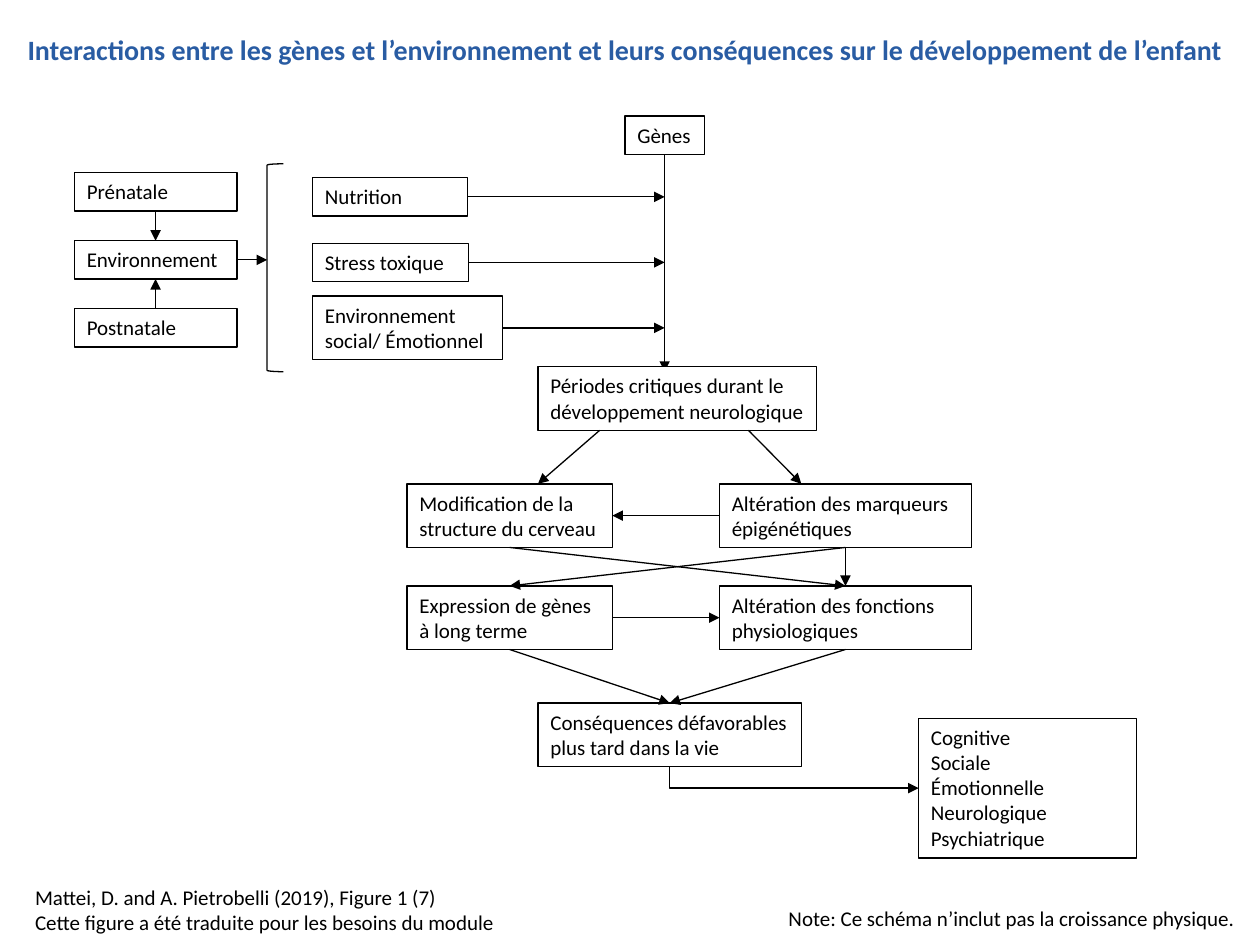
import dataclasses

import pptx
import pptx.dml.color
import pptx.enum.shapes
import pptx.enum.text
import pptx.oxml.ns
import pptx.oxml.xmlchemy
import pptx.util

TOP, LEFT, BOTTOM, RIGHT = range(4)
CELL = pptx.util.Inches(0.1)  # the slide is a grid of 100 columns by 75 rows
ONE_LINE, TWO_LINES = 3.05, 5.05  # box heights in rows


@dataclasses.dataclass(frozen=True)
class Theme:
    font: str = "Calibri"
    ink: str = "000000"
    paper: str = "FFFFFF"
    heading: str = "295CA3"
    heading_size: int = 16
    body_size: int = 12
    stroke: float = 0.75


@dataclasses.dataclass(frozen=True)
class Region:
    col: float
    row: float
    cols: float
    rows: float

    def point(self, col, row):
        return round((self.col + col) * CELL), round((self.row + row) * CELL)

    def area(self, col, row, cols, rows):
        return *self.point(col, row), round(cols * CELL), round(rows * CELL)

    def whole(self):
        return self.area(0, 0, self.cols, self.rows)


THEME = Theme()


def colour(code):
    return pptx.dml.color.RGBColor.from_string(code)


def write(shape, words, size=THEME.body_size, ink=THEME.ink, bold=False, wrap=True):
    frame = shape.text_frame
    frame.text = words
    frame.word_wrap = wrap
    frame.vertical_anchor = pptx.enum.text.MSO_ANCHOR.TOP
    for paragraph in frame.paragraphs:
        paragraph.alignment = pptx.enum.text.PP_ALIGN.LEFT
        for run in paragraph.runs:
            run.font.name = THEME.font
            run.font.size = pptx.util.Pt(size)
            run.font.bold = bold
            run.font.color.rgb = colour(ink)


def outline(shape):
    shape.line.color.rgb = colour(THEME.ink)
    shape.line.width = pptx.util.Pt(THEME.stroke)


def add_box(slide, place, words):
    box = slide.shapes.add_shape(pptx.enum.shapes.MSO_SHAPE.RECTANGLE, *place)
    box.shadow.inherit = False
    box.fill.solid()
    box.fill.fore_color.rgb = colour(THEME.paper)
    outline(box)
    write(box, words)
    return box


def add_arrow(slide, begin, end, kind=pptx.enum.shapes.MSO_CONNECTOR.STRAIGHT):
    """Each end is either a (box, side) pair or an (x, y) point."""
    arrow = slide.shapes.add_connector(kind, 0, 0, 0, 0)
    if isinstance(begin[0], int):
        arrow.begin_x, arrow.begin_y = begin
    else:
        arrow.begin_connect(*begin)
    if isinstance(end[0], int):
        arrow.end_x, arrow.end_y = end
    else:
        arrow.end_connect(*end)
    outline(arrow)
    properties = arrow._element.spPr
    head = pptx.oxml.xmlchemy.OxmlElement("a:tailEnd")
    head.set("type", "triangle")
    properties.find(pptx.oxml.ns.qn("a:ln")).append(head)
    properties.append(pptx.oxml.xmlchemy.OxmlElement("a:effectLst"))
    return arrow


def add_corner_arrow(slide, begin, end):
    """Goes down, then right: a one-bend connector, flipped and turned 270 degrees."""
    arrow = add_arrow(slide, begin, end, pptx.enum.shapes.MSO_CONNECTOR.ELBOW)
    x, y = arrow.begin_x, arrow.begin_y
    run, drop = arrow.end_x - x, arrow.end_y - y
    arrow.left, arrow.top = x + (run - drop) // 2, y + (drop - run) // 2
    arrow.width, arrow.height = drop, run
    properties = arrow._element.spPr
    properties.find(pptx.oxml.ns.qn("a:prstGeom")).set("prst", "bentConnector2")
    frame = properties.find(pptx.oxml.ns.qn("a:xfrm"))
    frame.set("rot", str(270 * 60000))
    frame.set("flipH", "1")


def add_caption(slide, region, words, **style):
    write(slide.shapes.add_textbox(*region.whole()), words, **style)


def add_environment(slide, region):
    prenatal, environment, postnatal = (
        add_box(slide, region.area(0, 0.7 + 5.4 * level, 12.9, ONE_LINE), words)
        for level, words in enumerate(["Prénatale", "Environnement", "Postnatale"])
    )
    add_arrow(slide, (prenatal, BOTTOM), (environment, TOP))
    add_arrow(slide, (postnatal, TOP), (environment, BOTTOM))
    bracket_left = region.cols - 1.3
    add_arrow(slide, (environment, RIGHT),
              region.point(bracket_left, 6.1 + ONE_LINE / 2))
    bracket = slide.shapes.add_shape(pptx.enum.shapes.MSO_SHAPE.LEFT_BRACKET,
                                     *region.area(bracket_left, 0, 1.3, region.rows))
    bracket.shadow.inherit = False
    bracket.fill.background()
    outline(bracket)


def add_gene_axis(slide, region):
    """Genes at the top of a vertical axis, with three factors acting on it."""
    axis = 27.95
    genes = add_box(slide, region.area(24.8, 0, 6.3, ONE_LINE), "Gènes")
    factors = [
        ("Nutrition", 4.9, 12.3, ONE_LINE),
        ("Stress toxique", 10.1, 12.4, ONE_LINE),
        ("Environnement social/ Émotionnel", 14.3, 15.1, TWO_LINES),
    ]
    for words, row, cols, rows in factors:
        factor = add_box(slide, region.area(0, row, cols, rows), words)
        add_arrow(slide, (factor, RIGHT), region.point(axis, row + rows / 2))
    add_arrow(slide, (genes, BOTTOM), region.point(axis, region.rows))


def add_development(slide, region):
    """Critical periods, two pairs of effects, and the consequences."""
    def box(col, row, cols, words):
        return add_box(slide, region.area(col, row, cols, TWO_LINES), words)

    middle, right = 10.4, 24.8
    upper, lower, last = 9.3, 17.4, 26.7
    box(middle, 0, 22.1, "Périodes critiques durant le développement neurologique")
    brain = box(0, upper, 16.3, "Modification de la structure du cerveau")
    markers = box(right, upper, 20, "Altération des marqueurs épigénétiques")
    expression = box(0, lower, 16.3, "Expression de gènes à long terme")
    functions = box(right, lower, 20, "Altération des fonctions physiologiques")
    consequences = box(middle, last, 20.9, "Conséquences défavorables plus tard dans la vie")

    for start, finish in [(15.3, 10.4), (27.1, 31.3)]:
        add_arrow(slide, region.point(start, TWO_LINES), region.point(finish, upper))
    add_arrow(slide, (markers, LEFT), (brain, RIGHT))
    add_arrow(slide, (expression, RIGHT), (functions, LEFT))
    for cause, effect in [(markers, functions), (brain, functions),
                          (markers, expression), (expression, consequences),
                          (functions, consequences)]:
        add_arrow(slide, (cause, BOTTOM), (effect, TOP))
    return consequences


def add_outcomes(slide, region, consequences):
    outcomes = ["Cognitive", "Sociale", "Émotionnelle", "Neurologique", "Psychiatrique"]
    box = add_box(slide, region.whole(), "\n".join(outcomes))
    add_corner_arrow(slide, (consequences, BOTTOM), (box, LEFT))


def main():
    deck = pptx.Presentation()
    deck.slide_width, deck.slide_height = 100 * CELL, 75 * CELL
    slide = deck.slides.add_slide(deck.slide_layouts[6])
    add_caption(slide, Region(1.2, 2.1, 98.5, 3.7),
                "Interactions entre les gènes et l’environnement et leurs "
                "conséquences sur le développement de l’enfant",
                size=THEME.heading_size, ink=THEME.heading, bold=True, wrap=False)
    add_environment(slide, Region(5.9, 13, 16.6, 16.5))
    add_gene_axis(slide, Region(24.8, 9.2, 31.1, 20.3))
    consequences = add_development(slide, Region(32.3, 29.1, 44.8, 31.75))
    add_outcomes(slide, Region(72.9, 57, 17.3, 11.1), consequences)
    add_caption(slide, Region(1.8, 69.7, 38.8, 5),
                "Mattei, D. and A. Pietrobelli (2019), Figure 1 (7)\n"
                "Cette figure a été traduite pour les besoins du module", wrap=False)
    add_caption(slide, Region(61.6, 71.4, 38.4, 3),
                "Note: Ce schéma n’inclut pas la croissance physique.")
    deck.save("out.pptx")


if __name__ == "__main__":
    main()
